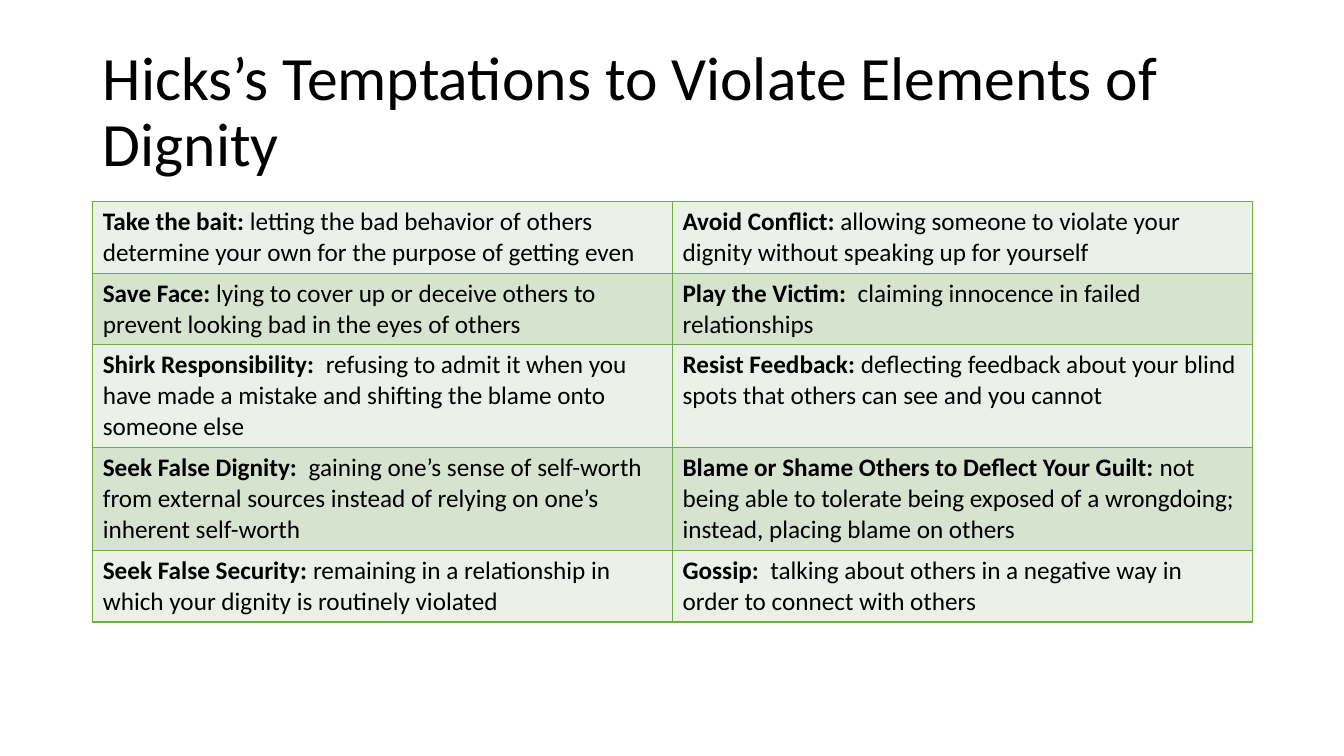
from dataclasses import dataclass

from lxml import etree
from pptx import Presentation
from pptx.dml.color import RGBColor
from pptx.enum.text import MSO_ANCHOR, MSO_AUTO_SIZE, PP_ALIGN
from pptx.oxml.ns import qn
from pptx.slide import Slide
from pptx.table import _Cell
from pptx.text.text import _Paragraph
from pptx.util import Inches, Pt

LEFT = PP_ALIGN.LEFT
MIDDLE = MSO_ANCHOR.MIDDLE
NO_FIT = MSO_AUTO_SIZE.NONE

COLORS = {"text": "000000", "line": "70AD47", "light": "EBF1E9", "dark": "D5E3CF"}
FONT = "Calibri"
EDGE, WIDTH = 0.92, 11.5
TITLE = "Hicks’s Temptations to Violate Elements of Dignity"


@dataclass
class Lure:
    name: str
    text: str


@dataclass
class Band:
    height: float
    lures: tuple[Lure, Lure]


BANDS = [
    Band(0.71, (
        Lure("Take the bait: ", "letting the bad behavior of others determine "
             "your own for the purpose of getting even"),
        Lure("Avoid Conflict: ", "allowing someone to violate your dignity "
             "without speaking up for yourself"))),
    Band(0.71, (
        Lure("Save Face: ", "lying to cover up or deceive others to prevent "
             "looking bad in the eyes of others"),
        Lure("Play the Victim: ", " claiming innocence in failed relationships"))),
    Band(1.02, (
        Lure("Shirk Responsibility: ", " refusing to admit it when you have made "
             "a mistake and shifting the blame onto someone else"),
        Lure("Resist Feedback: ", "deflecting feedback about your blind spots "
             "that others can see and you cannot"))),
    Band(1.02, (
        Lure("Seek False Dignity: ", " gaining one’s sense of self-worth from "
             "external sources instead of relying on one’s inherent self-worth"),
        Lure("Blame or Shame Others to Deflect Your Guilt: ", "not being able to "
             "tolerate being exposed of a wrongdoing; instead, placing blame on others"))),
    Band(0.71, (
        Lure("Seek False Security: ", "remaining in a relationship in which your "
             "dignity is routinely violated"),
        Lure("Gossip: ", " talking about others in a negative way in order to "
             "connect with others"))),
]


def color(key: str) -> RGBColor:
    return RGBColor.from_string(COLORS[key])


def set_font(para: _Paragraph, size: float) -> None:
    para.font.name = FONT
    para.font.size = Pt(size)
    para.font.color.rgb = color("text")


def add_title(slide: Slide) -> None:
    title = slide.shapes.title
    title.left, title.top = Inches(EDGE), Inches(0.4)
    title.width, title.height = Inches(WIDTH), Inches(1.45)
    frame = title.text_frame
    frame.text = TITLE
    frame.auto_size = NO_FIT
    frame.vertical_anchor = MIDDLE
    para = frame.paragraphs[0]
    para.alignment = LEFT
    para.line_spacing = 0.9
    set_font(para, 44)


def add_edges(cell: _Cell) -> None:
    """Draw a thin line on all four sides; call before the fill is set."""
    props = cell._tc.get_or_add_tcPr()
    for side in ("lnL", "lnR", "lnT", "lnB"):
        line = etree.SubElement(props, qn(f"a:{side}"), w=str(Pt(1)))
        fill = etree.SubElement(line, qn("a:solidFill"))
        etree.SubElement(fill, qn("a:srgbClr"), val=COLORS["line"])


def fill_cell(cell: _Cell, lure: Lure, shade: str) -> None:
    add_edges(cell)
    cell.fill.solid()
    cell.fill.fore_color.rgb = color(shade)
    para = cell.text_frame.paragraphs[0]
    set_font(para, 18)
    for text, bold in ((lure.name, True), (lure.text, False)):
        run = para.add_run()
        run.text = text
        run.font.bold = bold


def add_lures(slide: Slide) -> None:
    height = sum(band.height for band in BANDS)
    table = slide.shapes.add_table(
        len(BANDS), 2, Inches(EDGE), Inches(2), Inches(WIDTH), Inches(height)
    ).table
    table.first_row = False
    for row, band in enumerate(BANDS):
        table.rows[row].height = Inches(band.height)
        shade = "dark" if row % 2 else "light"
        for col, lure in enumerate(band.lures):
            fill_cell(table.cell(row, col), lure, shade)


def main() -> None:
    deck = Presentation()
    deck.slide_width, deck.slide_height = Inches(13.33), Inches(7.5)
    slide = deck.slides.add_slide(deck.slide_layouts.get_by_name("Title Only"))
    add_title(slide)
    add_lures(slide)
    deck.save("out.pptx")


if __name__ == "__main__":
    main()
